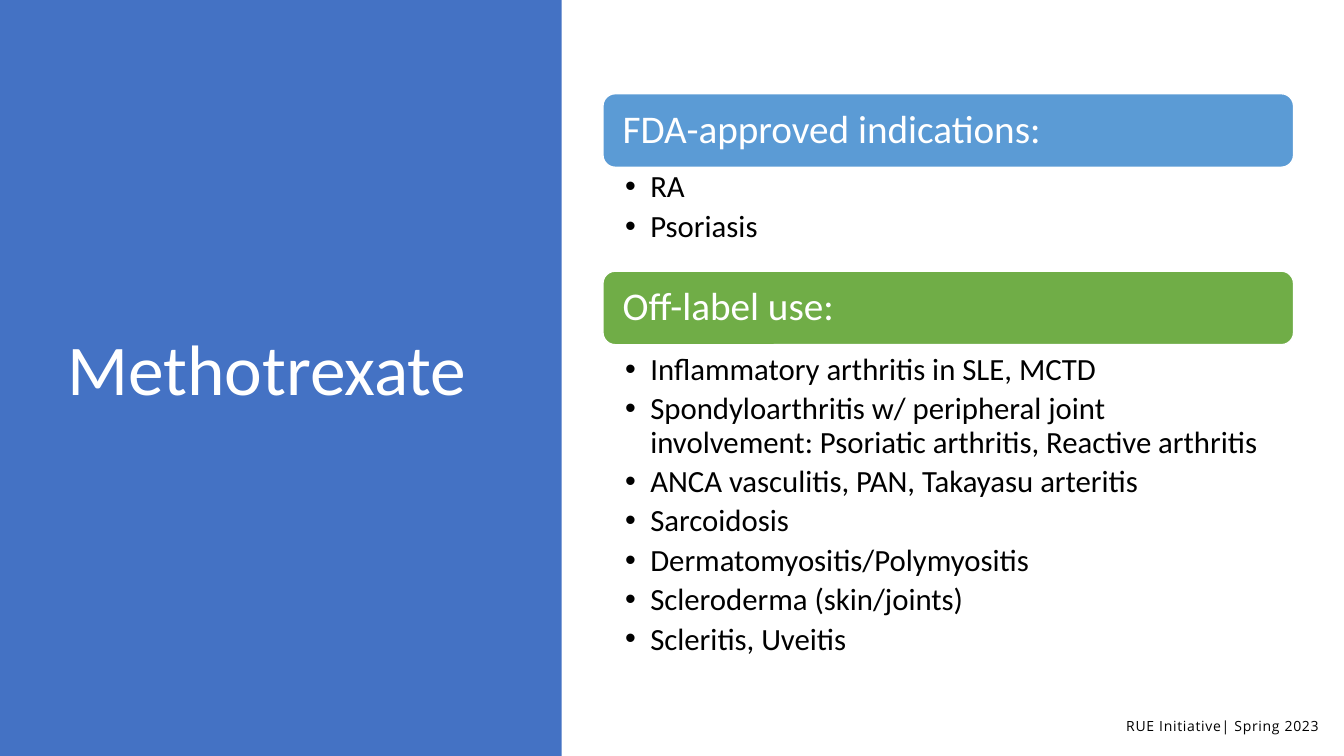
from pptx import Presentation
from pptx.dml.color import RGBColor
from pptx.enum.shapes import MSO_SHAPE as Shape
from pptx.enum.text import MSO_ANCHOR as Anchor, PP_ALIGN as Align
from pptx.util import Inches, Pt
from lxml import etree

BLUE = RGBColor(0x44, 0x72, 0xC4)
SKY = RGBColor(0x5B, 0x9B, 0xD5)
GREEN = RGBColor(0x70, 0xAD, 0x47)
WHITE = RGBColor(0xFF, 0xFF, 0xFF)
BLACK = RGBColor(0, 0, 0)
NS = "{http://schemas.openxmlformats.org/drawingml/2006/main}"


def write(shape, lines, size, color, font="Calibri", inset=(0.1, 0.05),
          anchor=Anchor.TOP, align=Align.LEFT, leading=0.9, after=0,
          bullet=False, track=0):
    frame = shape.text_frame
    frame.word_wrap = True
    frame.vertical_anchor = anchor
    frame.margin_left = frame.margin_right = Inches(inset[0])
    frame.margin_top = frame.margin_bottom = Inches(inset[1])
    for i, line in enumerate(lines):
        para = frame.add_paragraph() if i else frame.paragraphs[0]
        para.alignment = align
        para.line_spacing = leading
        para.space_after = Pt(after)
        run = para.add_run()
        run.text = line
        run.font.size = Pt(size)
        run.font.name = font
        run.font.color.rgb = color
        if track:
            run.font._element.set("spc", str(track))
        if bullet:
            props = para._p.get_or_add_pPr()
            props.set("marL", str(Inches(0.25)))
            props.set("indent", str(-Inches(0.25)))
            etree.SubElement(props, NS + "buFont", typeface="Arial")
            etree.SubElement(props, NS + "buChar", char="•")


def block(slide, kind, box, fill, line=None):
    shape = slide.shapes.add_shape(kind, *map(Inches, box))
    shape.shadow.inherit = False
    shape.fill.solid()
    shape.fill.fore_color.rgb = fill
    if line is None:
        shape.line.fill.background()
    else:
        shape.line.color.rgb = line
        shape.line.width = Pt(1)
    return shape


def label(slide, box, lines, size, color, **style):
    text = slide.shapes.add_textbox(*map(Inches, box))
    write(text, lines, size, color, **style)


def panel(slide, box, title):
    left, top, width, height = box
    block(slide, Shape.RECTANGLE, box, BLUE)
    label(slide, (left + 0.57, top + 0.68, width - 1.41, height - 1.48),
          [title], 51, WHITE, anchor=Anchor.MIDDLE)


def section(slide, box, head, items, fill, gap=0):
    left, top, width, height = box
    bar = 0.73
    # Heading bar
    shape = block(slide, Shape.ROUNDED_RECTANGLE, (left, top, width, bar),
                  fill, WHITE)
    write(shape, [head], 28, WHITE, inset=(0.16, 0.12), anchor=Anchor.MIDDLE)
    # Bullets below it
    label(slide, (left, top + bar + gap, width, height - bar - gap),
          items, 22, BLACK, inset=(0.22, 0.04), after=4.4, bullet=True)


def footer(slide, box, text):
    label(slide, box, [text], 10, BLACK, font="Open Sans", inset=(0, 0),
          align=Align.RIGHT, leading=Pt(12), track=50)


def main():
    deck = Presentation()
    deck.slide_width, deck.slide_height = Inches(13.33), Inches(7.5)
    slide = deck.slides.add_slide(deck.slide_layouts[6])

    panel(slide, (0, 0, 5.57, 7.5), "Methotrexate")
    section(slide, (5.98, 0.93, 6.85, 1.55), "FDA-approved indications:",
            ["RA", "Psoriasis"], SKY)
    section(slide, (5.98, 2.69, 6.85, 4.01), "Off-label use:", [
        "Inflammatory arthritis in SLE, MCTD",
        "Spondyloarthritis w/ peripheral joint involvement: "
        "Psoriatic arthritis, Reactive arthritis",
        "ANCA vasculitis, PAN, Takayasu arteritis",
        "Sarcoidosis",
        "Dermatomyositis/Polymyositis",
        "Scleroderma (skin/joints)",
        "Scleritis, Uveitis",
    ], GREEN, gap=0.05)
    footer(slide, (10.59, 7.12, 2.49, 0.17), "RUE Initiative| Spring 2023")

    deck.save("out.pptx")


if __name__ == "__main__":
    main()
